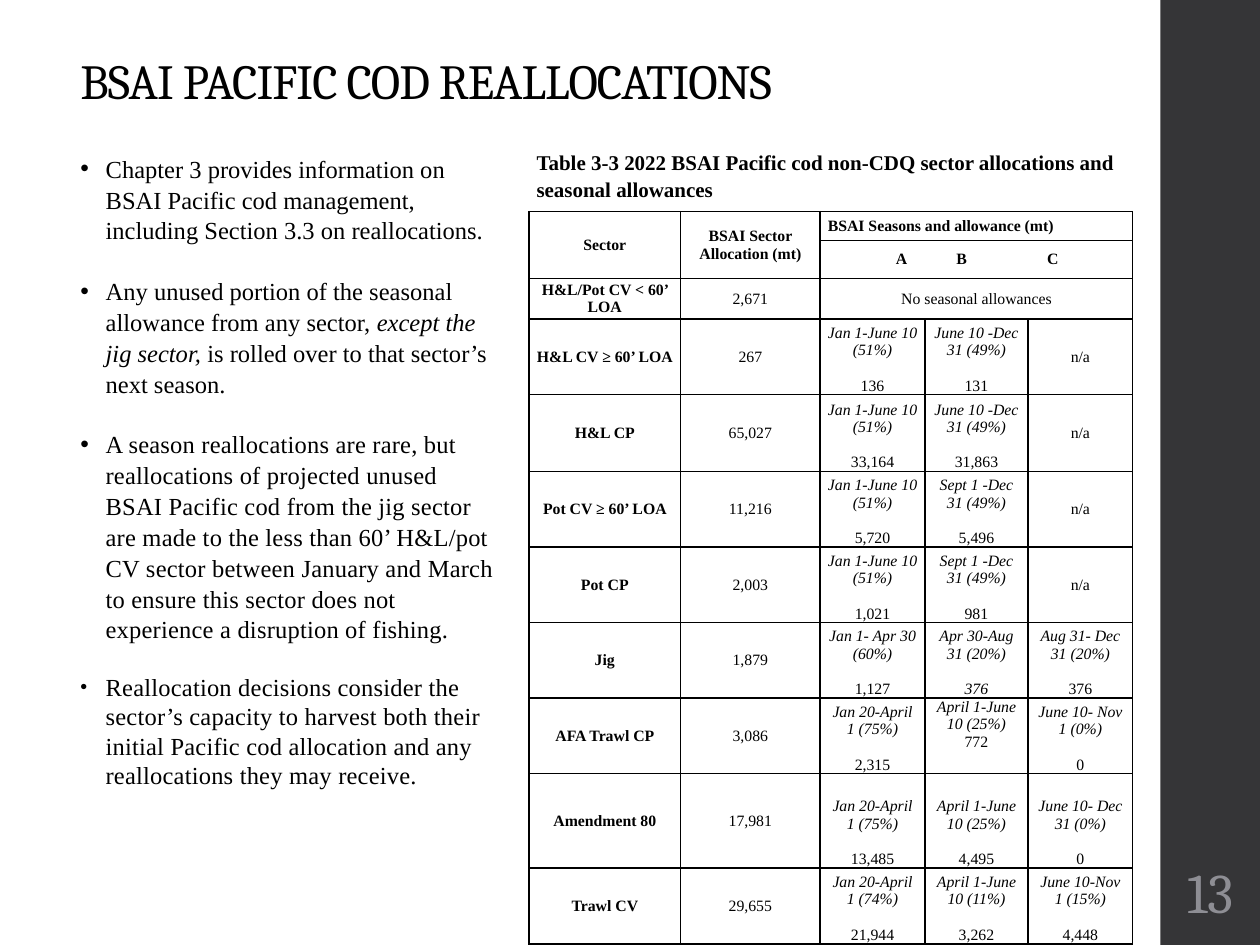
from lxml import etree
from pptx import Presentation
from pptx.dml.color import RGBColor
from pptx.enum.shapes import MSO_SHAPE
from pptx.enum.text import MSO_ANCHOR, PP_ALIGN
from pptx.oxml.ns import qn
from pptx.util import Inches, Pt

BLACK = RGBColor(0x00, 0x00, 0x00)
CHARCOAL = RGBColor(0x35, 0x35, 0x37)
GREY = RGBColor(0x8E, 0x8E, 0x94)
SERIF, HEADING = "Times New Roman", "Cambria"
LEFT, CENTER = PP_ALIGN.LEFT, PP_ALIGN.CENTER
TOP, MIDDLE, BOTTOM = MSO_ANCHOR.TOP, MSO_ANCHOR.MIDDLE, MSO_ANCHOR.BOTTOM

POINTS = [
    (["Chapter 3 provides information on BSAI Pacific cod management, "
      "including Section 3.3 on reallocations."], 0, 1.05, 0, 100),
    (["Any unused portion of the seasonal allowance from any sector, ",
      "except the jig sector, ",
      "is rolled over to that sector’s next season."], 17, 1.05, 0, 100),
    (["A season reallocations are rare, but reallocations of projected unused "
      "BSAI Pacific cod from the jig sector are made to the less than 60’ "
      "H&L/pot CV sector between January and March to ensure this sector does "
      "not experience a disruption of fishing."], 17, 1.05, 10, 100),
    (["Reallocation decisions consider the sector’s capacity to harvest both "
      "their initial Pacific cod allocation and any reallocations they may "
      "receive."], 16, 1, 10, 80),
]
COLUMN_WIDTHS = [1.2, 1.11, 0.83, 0.82, 0.83]
ROW_HEIGHTS = [0.23, 0.28, 0.32, 0.6, 0.61, 0.6, 0.6, 0.6, 0.6, 0.75, 0.6]
NO_SEASON = ("n/a",)
SECTORS = [
    ("H&L CV ≥ 60’ LOA", "267", ("Jan 1-June 10 (51%)", "136"),
     ("June 10 -Dec 31 (49%)", "131"), NO_SEASON),
    ("H&L CP", "65,027", ("Jan 1-June 10 (51%)", "33,164"),
     ("June 10 -Dec 31 (49%)", "31,863"), NO_SEASON),
    ("Pot CV ≥ 60’ LOA", "11,216", ("Jan 1-June 10 (51%)", "5,720"),
     ("Sept 1 -Dec 31 (49%)", "5,496"), NO_SEASON),
    ("Pot CP", "2,003", ("Jan 1-June 10 (51%)", "1,021"),
     ("Sept 1 -Dec 31 (49%)", "981"), NO_SEASON),
    ("Jig", "1,879", ("Jan 1- Apr 30 (60%)", "1,127"),
     ("Apr 30-Aug 31 (20%)", "376"), ("Aug 31- Dec 31 (20%)", "376")),
    ("AFA Trawl CP", "3,086", ("Jan 20-April 1 (75%)", "2,315"),
     ("April 1-June 10 (25%)", "772"), ("June 10- Nov 1 (0%)", "0")),
    ("Amendment 80", "17,981", ("Jan 20-April 1 (75%)", "13,485"),
     ("April 1-June 10 (25%)", "4,495"), ("June 10- Dec 31 (0%)", "0")),
    ("Trawl CV", "29,655", ("Jan 20-April 1 (74%)", "21,944"),
     ("April 1-June 10 (11%)", "3,262"), ("June 10-Nov 1 (15%)", "4,448")),
]


def style(paragraph, size, name=SERIF, color=BLACK, bold=False, italic=False):
    """Set the font of a whole paragraph."""
    font = paragraph.font
    font.size, font.name, font.bold, font.italic = Pt(size), name, bold, italic
    font.color.rgb = color


def track(run, hundredths):
    """Set the letter spacing of a run in hundredths of a point."""
    run._r.get_or_add_rPr().set("spc", str(hundredths))


def add_tabs(paragraph, stops):
    """Give a paragraph left tab stops."""
    tabs = etree.SubElement(paragraph._p.get_or_add_pPr(), qn("a:tabLst"))
    for stop in stops:
        etree.SubElement(tabs, qn("a:tab"), pos=str(Inches(stop)), algn="l")


def add_bullet(paragraph, percent):
    """Give a paragraph a hanging black bullet."""
    properties = paragraph._p.get_or_add_pPr()
    properties.set("marL", str(Inches(0.2)))
    properties.set("indent", str(-Inches(0.2)))
    color = etree.SubElement(properties, qn("a:buClr"))
    etree.SubElement(color, qn("a:srgbClr"), val=str(BLACK))
    etree.SubElement(properties, qn("a:buSzPct"), val=str(percent * 1000))
    etree.SubElement(properties, qn("a:buFont"), typeface="Arial")
    etree.SubElement(properties, qn("a:buChar"), char="•")


def add_frame(slide, box, anchor=TOP):
    """Add a wrapping text box and return its text frame."""
    frame = slide.shapes.add_textbox(*map(Inches, box)).text_frame
    frame.word_wrap, frame.vertical_anchor = True, anchor
    return frame


def add_sidebar(slide, box):
    """Draw the dark band with the slide number at its foot."""
    left, top, width, height = box
    band = slide.shapes.add_shape(MSO_SHAPE.RECTANGLE, *map(Inches, box))
    band.shadow.inherit = False
    band.fill.solid()
    band.fill.fore_color.rgb = CHARCOAL
    band.line.fill.background()
    frame = add_frame(slide, (left + 0.02, top + height - 0.75, width - 0.04, 0.65), MIDDLE)
    frame.margin_left = frame.margin_right = Inches(0.03)
    number = frame.paragraphs[0]
    number.text, number.alignment = "13", CENTER
    style(number, 32, HEADING, GREY)


def add_title(slide, box):
    """Write the slide title."""
    title = add_frame(slide, box, BOTTOM).paragraphs[0]
    title.line_spacing = 0.9
    title.text = "BSAI PACIFIC COD REALLOCATIONS"
    track(title.runs[0], -50)
    style(title, 28, HEADING)


def add_points(slide, box):
    """Write the bulleted points."""
    frame = add_frame(slide, box)
    for index, (parts, gap, spacing, tracking, bullet_size) in enumerate(POINTS):
        point = frame.paragraphs[0] if index == 0 else frame.add_paragraph()
        point.line_spacing, point.space_before = spacing, Pt(gap)
        add_bullet(point, bullet_size)
        style(point, 14)
        for position, part in enumerate(parts):
            run = point.add_run()
            run.text = part
            if position == 1:
                run.font.italic = True
            if tracking:
                track(run, tracking)


def add_caption(slide, box):
    """Write the table caption."""
    caption = add_frame(slide, box).paragraphs[0]
    caption.line_spacing = 1.08
    caption.text = ("Table 3-3 2022 BSAI Pacific cod non-CDQ sector allocations "
                    "and seasonal allowances")
    style(caption, 12, bold=True)


def format_cell(cell):
    """Clear a cell's fill and give it margins and black borders."""
    cell.margin_left = cell.margin_right = Inches(0.06)
    cell.margin_top = cell.margin_bottom = 0
    properties = cell._tc.get_or_add_tcPr()
    for side in ("a:lnL", "a:lnR", "a:lnT", "a:lnB"):
        line = etree.SubElement(properties, qn(side), w=str(Pt(1)))
        fill = etree.SubElement(line, qn("a:solidFill"))
        etree.SubElement(fill, qn("a:srgbClr"), val=str(BLACK))
    cell.fill.background()


def write_cell(cell, text, bold=False, alignment=CENTER, tabs=()):
    """Write one centred line of text in a cell."""
    cell.vertical_anchor = MIDDLE
    line = cell.text_frame.paragraphs[0]
    line.text, line.alignment = text, alignment
    if tabs:
        add_tabs(line, tabs)
    style(line, 9, bold=bold)


def write_season(cell, dates, allowance, anchor=BOTTOM, gap=10.3, italic=False):
    """Write the season's dates above its allowance."""
    write_cell(cell, dates)
    cell.vertical_anchor = anchor
    cell.text_frame.paragraphs[0].font.italic = True
    amount = cell.text_frame.add_paragraph()
    amount.text, amount.alignment, amount.space_before = allowance, CENTER, Pt(gap)
    style(amount, 9, italic=italic)


def add_allocations(slide, box):
    """Build the table of sector allocations and seasonal allowances."""
    table = slide.shapes.add_table(
        len(ROW_HEIGHTS), len(COLUMN_WIDTHS), *map(Inches, box)).table
    table.first_row = table.horz_banding = False
    for column, width in zip(table.columns, COLUMN_WIDTHS):
        column.width = Inches(width)
    for row, height in zip(table.rows, ROW_HEIGHTS):
        row.height = Inches(height)
    for cell in table.iter_cells():
        format_cell(cell)
    for column in (0, 1):
        table.cell(0, column).merge(table.cell(1, column))
    for row in range(3):
        table.cell(row, 2).merge(table.cell(row, 4))
    write_cell(table.cell(0, 0), "Sector", True)
    write_cell(table.cell(0, 1), "BSAI Sector Allocation (mt)", True)
    write_cell(table.cell(0, 2), "BSAI Seasons and allowance (mt)", True, LEFT)
    write_cell(table.cell(1, 2), "\tA\tB\tC", True, LEFT, (0.54, 1.02, 1.74))
    write_cell(table.cell(2, 0), "H&L/Pot CV < 60’ LOA", True)
    write_cell(table.cell(2, 1), "2,671")
    write_cell(table.cell(2, 2), "No seasonal allowances")
    exceptions = {("Jig", 3): {"italic": True},
                  ("AFA Trawl CP", 3): {"anchor": TOP, "gap": 0}}
    for row, (sector, allocation, *seasons) in enumerate(SECTORS, 3):
        write_cell(table.cell(row, 0), sector, True)
        write_cell(table.cell(row, 1), allocation)
        for column, season in enumerate(seasons, 2):
            cell = table.cell(row, column)
            if season == NO_SEASON:
                write_cell(cell, *season)
            else:
                write_season(cell, *season, **exceptions.get((sector, column), {}))


def main():
    """Build and save the slide."""
    deck = Presentation()
    deck.slide_width, deck.slide_height = Inches(10), Inches(7.5)
    slide = deck.slides.add_slide(deck.slide_layouts[6])
    add_sidebar(slide, (9.21, 0, 0.79, 7.5))
    add_title(slide, (0.54, 0.15, 8.93, 0.77))
    add_points(slide, (0.54, 1.16, 3.48, 5.37))
    add_allocations(slide, (4.2, 1.68, sum(COLUMN_WIDTHS), sum(ROW_HEIGHTS)))
    add_caption(slide, (4.16, 1.12, 5.19, 0.5))
    deck.save("out.pptx")


if __name__ == "__main__":
    main()
